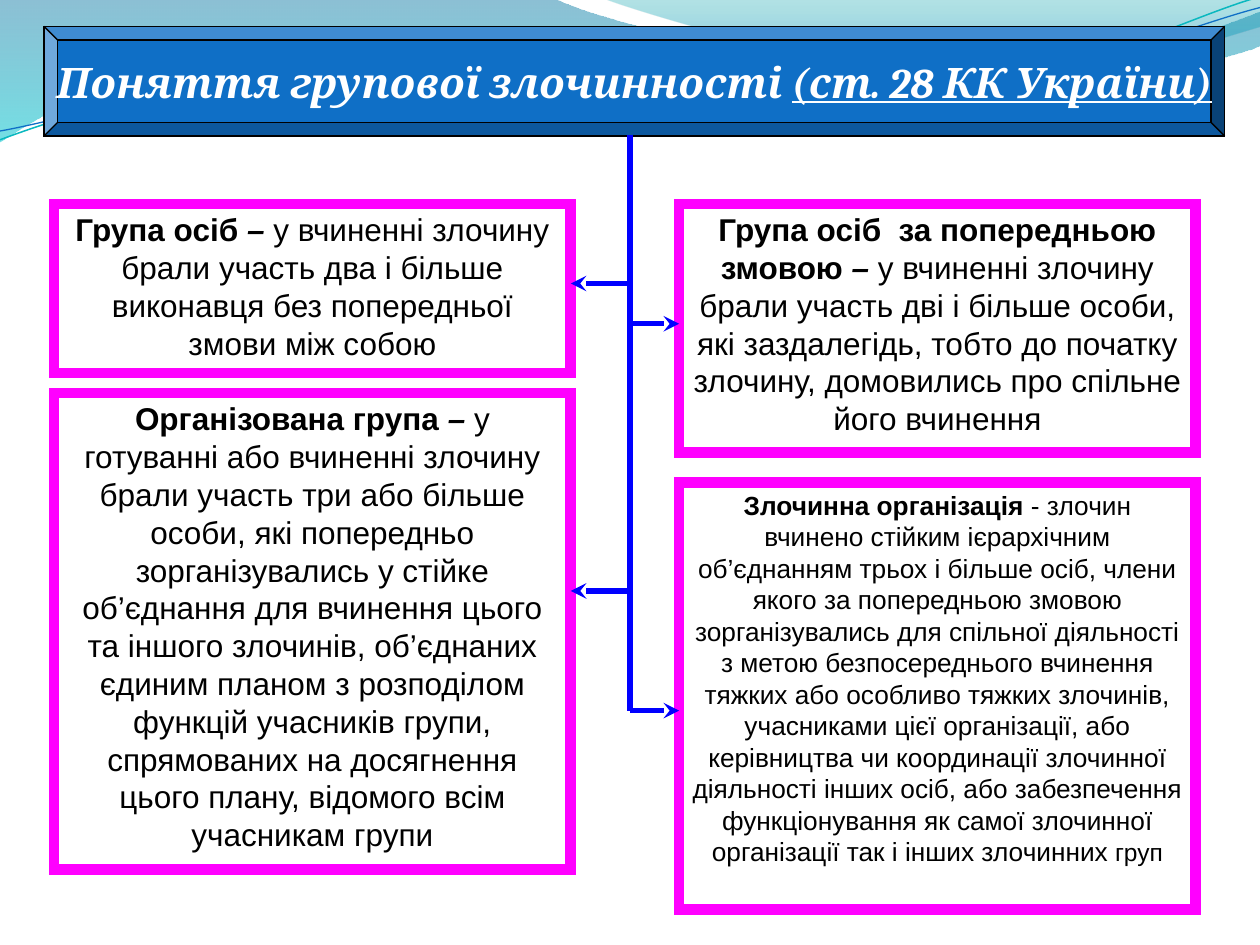
from dataclasses import dataclass

from lxml.etree import SubElement
from pptx import Presentation
from pptx.dml.color import RGBColor
from pptx.enum.shapes import MSO_CONNECTOR, MSO_SHAPE
from pptx.enum.text import MSO_ANCHOR, PP_ALIGN
from pptx.oxml.ns import qn
from pptx.util import Inches, Pt

COLORS = {
    "white": "FFFFFF", "black": "000000", "blue": "0F6FC6",
    "pink": "FF00FF", "arrow": "0000FF", "aqua": "0AB8BF",
    "deep": "0074A1", "cyan": "00C6CF", "teal": "00A1A9", "sky": "008BBF",
}


@dataclass
class Run:
    text: str
    size: float = 18
    bold: bool = False
    slant: bool = False
    under: bool = False
    font: str = "Arial"
    color: str = "black"


@dataclass
class Box:
    left: float
    top: float
    height: float
    runs: list[Run]


@dataclass
class Stop:
    place: float
    color: str
    alpha: int


@dataclass
class Wave:
    start: tuple
    steps: list[tuple]
    stops: tuple = ()
    line: str = ""
    width: float = 0


@dataclass
class Arrow:
    end: float
    y: float


def tint(name: str) -> RGBColor:
    return RGBColor.from_string(COLORS[name])


def bend(shape, steps: list[tuple]) -> None:
    nodes = list(shape.element.spPr.iter(qn("a:lnTo")))
    for node, step in zip(nodes, steps):
        if len(step) == 2:
            continue
        curve = node.makeelement(qn("a:cubicBezTo"))
        for x, y in zip(step[::2], step[1::2]):
            spot = SubElement(curve, qn("a:pt"))
            spot.set("x", str(Inches(x) - shape.left))
            spot.set("y", str(Inches(y) - shape.top))
        node.getparent().replace(node, curve)


def draw_wave(shapes, wave: Wave) -> None:
    pen = shapes.build_freeform(*map(Inches, wave.start), scale=1.0)
    ends = [tuple(map(Inches, step[-2:])) for step in wave.steps]
    pen.add_line_segments(ends, close=bool(wave.stops))
    shape = pen.convert_to_shape()
    bend(shape, wave.steps)
    shape.shadow.inherit = False
    if wave.line:
        shape.fill.background()
        shape.line.color.rgb = tint(wave.line)
        shape.line.width = Pt(wave.width)
        return
    shape.line.fill.background()
    shape.fill.gradient()
    shape.fill.gradient_angle = 270
    for mark, stop in zip(shape.fill.gradient_stops, wave.stops):
        mark.position = stop.place
        mark.color.rgb = tint(stop.color)
    for node, stop in zip(shape.element.spPr.iter(qn("a:srgbClr")), wave.stops):
        SubElement(node, qn("a:alpha")).set("val", str(stop.alpha * 1000))


def draw_box(shapes, kind, place: tuple, fill: str, line: str, width: float,
             runs: list[Run], anchor, wrap: bool):
    shape = shapes.add_shape(kind, *map(Inches, place))
    shape.shadow.inherit = False
    shape.fill.solid()
    shape.fill.fore_color.rgb = tint(fill)
    shape.line.color.rgb = tint(line)
    shape.line.width = Pt(width)
    edge = shape.element.spPr.find(qn("a:ln"))
    SubElement(edge, qn("a:miter")).set("lim", "800000")
    frame = shape.text_frame
    frame.word_wrap = wrap
    frame.vertical_anchor = anchor
    para = frame.paragraphs[0]
    para.alignment = PP_ALIGN.CENTER
    for item in runs:
        run = para.add_run()
        run.text = item.text
        font = run.font
        font.name, font.size = item.font, Pt(item.size)
        font.bold, font.italic, font.underline = item.bold, item.slant, item.under
        font.color.rgb = tint(item.color)
    return shape


def draw_line(shapes, x1: float, y1: float, x2: float, y2: float,
              head: bool) -> None:
    line = shapes.add_connector(
        MSO_CONNECTOR.STRAIGHT, *map(Inches, (x1, y1, x2, y2)))
    line.line.color.rgb = tint("arrow")
    line.line.width = Pt(3)
    if head:
        edge = line.element.spPr.find(qn("a:ln"))
        SubElement(edge, qn("a:tailEnd")).set("type", "stealth")
    SubElement(line.element.spPr, qn("a:effectLst"))


def term(name: str, text: str) -> list[Run]:
    return [Run(name, bold=True), Run(" – ", bold=True, slant=True), Run(text)]


LEFT, RIGHT, WIDTH, SPINE = 0.43, 5.39, 4.1, 5

WAVES = [
    Wave((0, 0), [
        (4.4, -0.01), (4.76, 0.17, 6.64, 0.63, 7.58, 0.63),
        (8.53, 0.63, 9.58, 0.26, 10, 0.09), (10.01, 0.36),
        (9.83, 0.44, 8.7, 0.76, 7.46, 0.75),
        (6.22, 0.75, 3.82, 0.28, 2.57, 0.34),
        (1.29, 0.36, 0.46, 0.83, -0.01, 1.13), (0, 0)],
        (Stop(0, "deep", 45), Stop(1, "cyan", 55))),
    Wave((4.79, -0.01), [
        (5.09, 0.11, 6.82, 0.62, 7.69, 0.65),
        (8.56, 0.69, 9.61, 0.32, 10, 0.21), (10, 0), (4.79, -0.01)],
        (Stop(0, "teal", 30), Stop(0.8, "sky", 45))),
    Wave((0, 1.11), [
        (0.48, 0.93, 1.58, 0.57, 2.77, 0.52),
        (3.95, 0.47, 5.93, 0.89, 7.13, 0.8),
        (8.33, 0.71, 9.38, 0.15, 9.98, -0.02)], line="aqua", width=0.85),
    Wave((0, 1.04), [
        (0.47, 0.96, 1.64, 0.61, 2.83, 0.56),
        (4.03, 0.51, 5.97, 0.84, 7.17, 0.75),
        (8.36, 0.67, 9.41, 0.21, 10, 0.06)], line="blue", width=0.75),
]

TITLE = [
    Run(text, 24, True, True, under, "Cambria", "white")
    for text, under in (("Поняття групової злочинності ", False),
                        ("(ст. 28 КК України)", True))
]

BOXES = [
    Box(LEFT, 1.62, 1.34, term(
        "Група осіб",
        "у вчиненні злочину брали участь два і більше виконавця без попередньої змови між собою")),
    Box(LEFT, 3.12, 3.78, term(
        "Організована група",
        "у готуванні або вчиненні злочину брали участь три або більше особи, які попередньо "
        "зорганізувались у стійке об’єднання для вчинення цього та іншого злочинів, об’єднаних "
        "єдиним планом з розподілом функцій учасників групи, спрямованих на досягнення цього "
        "плану, відомого всім учасникам групи")),
    Box(RIGHT, 1.62, 1.97, term(
        "Група осіб  за попередньою змовою",
        "у вчиненні злочину брали участь дві і більше особи, які заздалегідь, тобто до початку "
        "злочину, домовились про спільне його вчинення")),
    Box(RIGHT, 3.83, 3.39, [
        Run("Злочинна організація ", 15, True),
        Run("- злочин вчинено стійким ієрархічним об’єднанням трьох і більше осіб, члени якого за "
            "попередньою змовою зорганізувались для спільної діяльності з метою безпосереднього "
            "вчинення тяжких або особливо тяжких злочинів, учасниками цієї організації, або "
            "керівництва чи координації злочинної діяльності інших осіб, або забезпечення "
            "функціонування як самої злочинної організації так і інших злочинних", 15),
        Run(" груп", 14)]),
]

ARROWS = [Arrow(LEFT + WIDTH, 2.25), Arrow(RIGHT, 2.57),
          Arrow(LEFT + WIDTH, 4.69), Arrow(RIGHT, 5.64)]


def main() -> None:
    deck = Presentation()
    deck.slide_width, deck.slide_height = Inches(10), Inches(7.5)
    shapes = deck.slides.add_slide(deck.slide_layouts[6]).shapes
    for wave in WAVES:
        draw_wave(shapes, wave)
    title = draw_box(shapes, MSO_SHAPE.BEVEL, (0.35, 0.21, 9.37, 0.87), "blue",
                     "black", 0.75, TITLE, MSO_ANCHOR.MIDDLE, False)
    title.adjustments[0] = 0.125
    for box in BOXES:
        draw_box(shapes, MSO_SHAPE.RECTANGLE, (box.left, box.top, WIDTH, box.height),
                 "white", "pink", 6, box.runs, MSO_ANCHOR.TOP, True)
    draw_line(shapes, SPINE, 1.07, SPINE, ARROWS[-1].y, False)
    for arrow in ARROWS:
        draw_line(shapes, SPINE, arrow.y, arrow.end, arrow.y, True)
    deck.save("out.pptx")


if __name__ == "__main__":
    main()
